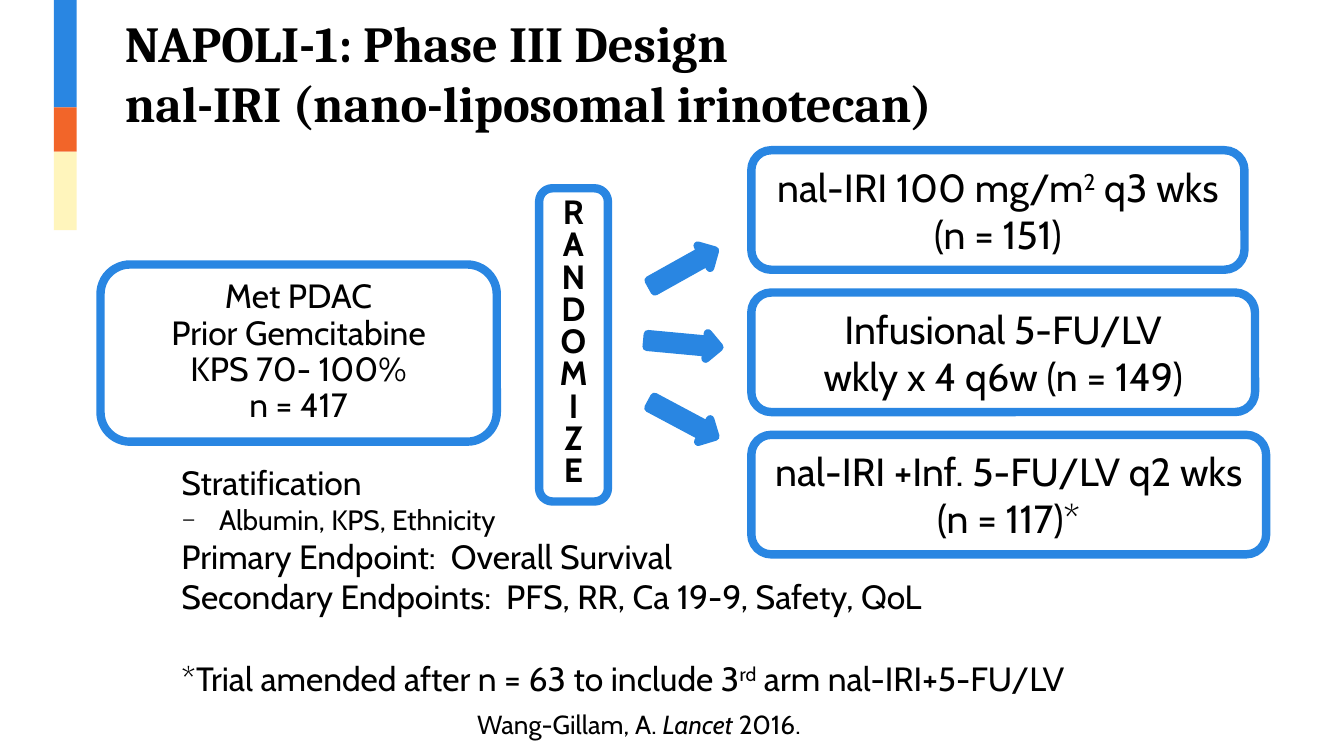
import pptx
import pptx.dml.color
import pptx.enum.shapes
import pptx.enum.text
import pptx.oxml
import pptx.oxml.ns
import pptx.util
from pptx.util import Cm

BLUE = pptx.dml.color.RGBColor(0x29, 0x86, 0xE2)
ORANGE = pptx.dml.color.RGBColor(0xF2, 0x65, 0x29)
CREAM = pptx.dml.color.RGBColor(0xFF, 0xF5, 0xBC)
WHITE = pptx.dml.color.RGBColor(0xFF, 0xFF, 0xFF)
BLACK = pptx.dml.color.RGBColor(0, 0, 0)

SHAPES = pptx.enum.shapes.MSO_SHAPE
ALIGN = pptx.enum.text.PP_ALIGN
ANCHOR = pptx.enum.text.MSO_ANCHOR

ARMS = [
    (9.32, ["nal-IRI 100 mg/m^2^ q3 wks", "(n = 151)"]),
    (9.52, ["Infusional 5-FU/LV", "wkly x 4 q6w (n = 149)"]),
    (9.73, ["nal-IRI +Inf. 5-FU/LV q2 wks", "(n = 117)*"]),
]
ARROW_ANGLES = [-29.2, 5.3, 28.1]


def write(box, lines, size, font="Cabin", bold=False, align=ALIGN.LEFT,
          anchor=ANCHOR.TOP, spacing=None):
    """Fill a box, one paragraph a line; ^x^ is superscript and _x_ italic."""
    frame = box.text_frame
    frame.word_wrap = True
    frame.vertical_anchor = anchor
    frame.text = "\n".join(lines)
    for para in frame.paragraphs:
        para.alignment = align
        if spacing:
            para.line_spacing = spacing
        split_marked_spans(para)
        for span in para.runs:
            span.font.name = font
            span.font.size = pptx.util.Pt(size)
            span.font.bold = bold
            span.font.color.rgb = BLACK
    return frame.paragraphs


def split_marked_spans(para):
    for mark in "^_":
        parts = para.text.split(mark)
        if len(parts) == 1:
            continue
        para.text = parts[0]
        for number, part in enumerate(parts[1:], start=1):
            span = para.add_run()
            span.text = part
            if number % 2 and mark == "_":
                span.font.italic = True
            elif number % 2:
                span.font._element.set("baseline", "30000")
        return


def add_text(page, left, top, width, height, lines, size, **style):
    box = page.shapes.add_textbox(Cm(left), Cm(top), Cm(width), Cm(height))
    return write(box, lines, size, **style)


def add_shape(page, kind, left, top, width, height, fill, line=None):
    shape = page.shapes.add_shape(kind, Cm(left), Cm(top), Cm(width), Cm(height))
    shape.shadow.inherit = False
    shape.fill.solid()
    shape.fill.fore_color.rgb = fill
    if line is None:
        shape.line.fill.background()
    else:
        shape.line.color.rgb = line
        shape.line.width = pptx.util.Pt(4.5)
    return shape


def add_card(page, left, top, width, height, lines, size, corner=0.167, **style):
    card = add_shape(page, SHAPES.ROUNDED_RECTANGLE, left, top, width, height,
                     WHITE, BLUE)
    card.adjustments[0] = corner
    write(card, lines, size, align=ALIGN.CENTER, **style)


def add_side_bar(page):
    top = 0
    for height, colour in [(2.03, BLUE), (0.84, ORANGE), (1.48, CREAM)]:
        add_shape(page, SHAPES.RECTANGLE, 1.02, top, 0.43, height, colour)
        top += height


def add_arms(page):
    for row, ((width, lines), angle) in enumerate(zip(ARMS, ARROW_ANGLES)):
        add_card(page, 14.2, 2.84 + 2.69 * row, width, 2.26, lines, 21,
                 anchor=ANCHOR.MIDDLE)
        arrow = add_shape(page, SHAPES.RIGHT_ARROW, 12.23, 4.83 + 1.43 * row,
                          1.37, 0.48, BLUE, BLUE)
        arrow.rotation = angle


def add_bullet(para, character, indent):
    properties = para._p.get_or_add_pPr()
    properties.set("marL", str(indent))
    properties.set("indent", str(-indent))
    bullet = pptx.oxml.parse_xml(
        f'<a:buChar {pptx.oxml.ns.nsdecls("a")} char="{character}"/>')
    properties.append(bullet)


def add_endpoints(page):
    paras = add_text(page, 3.18, 8.61, 18.26, 4.75, [
        "Stratification",
        "Albumin, KPS, Ethnicity",
        "Primary Endpoint:  Overall Survival",
        "Secondary Endpoints:  PFS, RR, Ca 19-9, Safety, QoL",
        "*Trial amended after n = 63 to include 3^rd^ arm nal-IRI+5-FU/LV",
    ], 18)
    add_bullet(paras[1], "₋", Cm(0.71))
    paras[1].runs[0].font.size = pptx.util.Pt(15)
    paras[-1].space_before = pptx.util.Pt(22)


def main():
    deck = pptx.Presentation()
    deck.slide_width, deck.slide_height = Cm(25.4), Cm(14.29)
    page = deck.slides.add_slide(deck.slide_layouts[6])

    add_side_bar(page)
    add_text(page, 2.11, 0.71, 18.75, 1.93,
             ["NAPOLI-1: Phase III Design", "nal-IRI (nano-liposomal irinotecan)"],
             27, font="Cambria", bold=True, anchor=ANCHOR.BOTTOM)
    add_text(page, 6.12, 13.31, 11.91, 0.76, ["Wang-Gillam, A. _Lancet_ 2016."],
             14, align=ALIGN.CENTER, anchor=ANCHOR.MIDDLE)
    add_endpoints(page)
    add_card(page, 1.9, 5, 7.49, 3.35,
             ["Met PDAC", "Prior Gemcitabine", "KPS 70- 100%", "n = 417"],
             18, spacing=0.9)
    add_card(page, 10.19, 3.56, 1.3, 5.92, list("RANDOMIZE"), 18,
             corner=0.193, bold=True, spacing=0.8)
    add_arms(page)

    deck.save("out.pptx")


if __name__ == "__main__":
    main()
